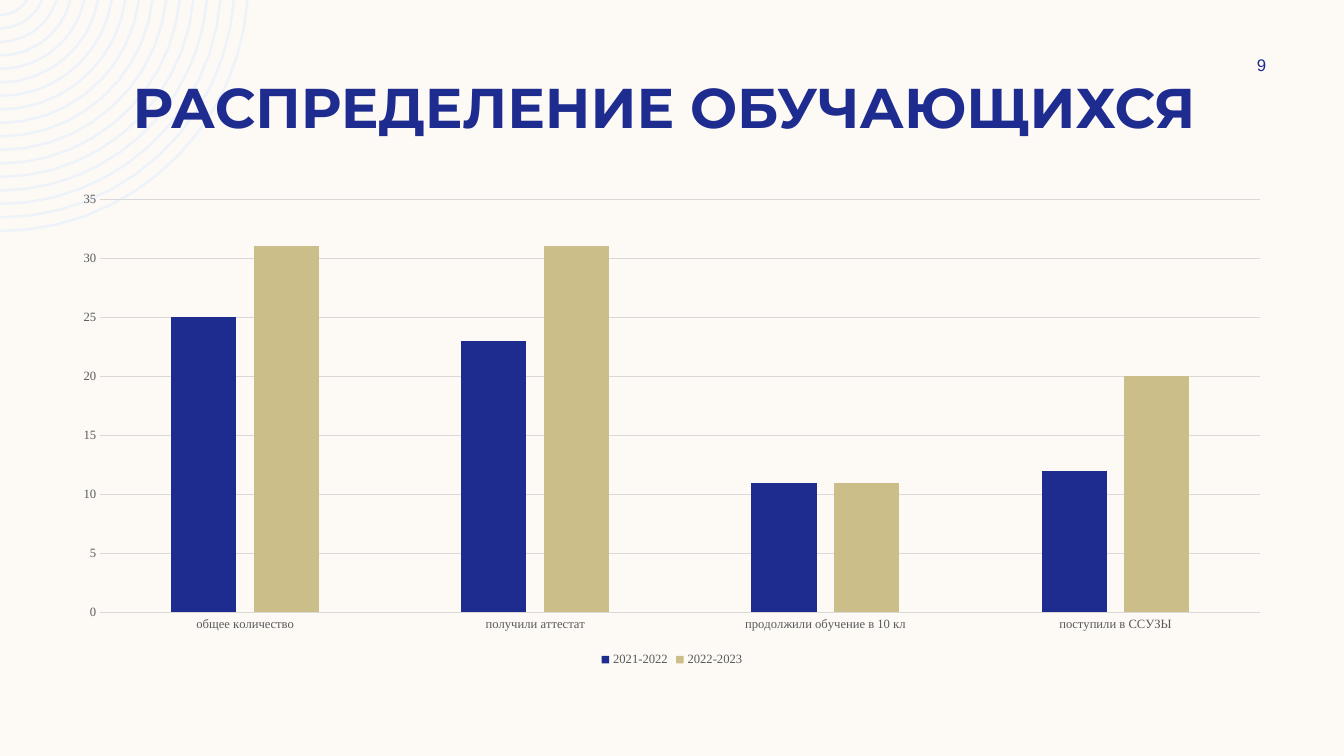
import math

from pptx import Presentation
from pptx.chart.data import CategoryChartData
from pptx.dml.color import RGBColor
from pptx.enum import chart as ch, text
from pptx.util import Emu, Pt

NAVY = RGBColor(0x1F, 0x2C, 0x8F)
SAND = RGBColor(0xCC, 0xBE, 0x89)
CREAM = RGBColor(0xFD, 0xFA, 0xF6)
PALE_BLUE = RGBColor(0xEE, 0xF3, 0xFA)
GRAY = RGBColor(0x59, 0x59, 0x59)
GRID = RGBColor(0xD9, 0xD9, 0xD9)

CATEGORIES = ["общее количество", "получили аттестат",
              "продолжили обучение в 10 кл", "поступили в ССУЗЫ"]
SERIES = [("2021-2022", (25, 23, 11, 12), NAVY),
          ("2022-2023", (31, 31, 11, 20), SAND)]


def px(n):
    """Turn pixels into EMU."""
    return Emu(round(n * 914400 / 100.8))


def style_font(font, size, color, name="Times New Roman", bold=False):
    """Set the look of a font."""
    font.size, font.name, font.bold = Pt(size), name, bold
    font.color.rgb = color


def add_text(s, box, content, **fmt):
    """Add a centred text box."""
    tf = s.shapes.add_textbox(*map(px, box)).text_frame
    tf.word_wrap = True
    tf.vertical_anchor = text.MSO_ANCHOR.MIDDLE
    p = tf.paragraphs[0]
    p.alignment = text.PP_ALIGN.CENTER
    r = p.add_run()
    r.text = content
    style_font(r.font, **fmt)


def arc(left, top, drop, radius):
    """List points of an arc from the top edge to the left edge."""
    steps = max(4, round(0.8 * math.sqrt(radius)))
    start = math.asin(drop / radius)
    angles = [start + (math.pi / 2 - start) * i / steps for i in range(steps + 1)]
    return [(px(left + radius * math.cos(a)), px(top - drop + radius * math.sin(a)))
            for a in angles]


def add_rings(s, box, count=17, drop=17):
    """Draw concentric rings in the corner of the box."""
    left, top, _, height = box
    outer, smallest = height + drop, 32
    step = (outer - smallest) / (count - 1)
    first, *others = [arc(left, top, drop, outer - i * step) for i in range(count)]
    fb = s.shapes.build_freeform(*first[0])
    fb.add_line_segments(first[1:], close=False)
    for points in others:
        fb.move_to(*points[0])
        fb.add_line_segments(points[1:], close=False)
    sp = fb.convert_to_shape()
    sp.shadow.inherit = False
    sp.fill.background()
    sp.line.color.rgb = PALE_BLUE
    sp.line.width = Pt(1.8)


def add_columns(s, box):
    """Add the clustered column chart of pupils by year."""
    data = CategoryChartData()
    data.categories = CATEGORIES
    for name, values, _ in SERIES:
        data.add_series(name, values)
    chart = s.shapes.add_chart(ch.XL_CHART_TYPE.COLUMN_CLUSTERED,
                               *map(px, box), data).chart
    style_font(chart.font, 10, GRAY)
    chart.has_title = False
    chart.has_legend = True
    chart.legend.position = ch.XL_LEGEND_POSITION.BOTTOM
    chart.legend.include_in_layout = False
    style_font(chart.legend.font, 9, GRAY)

    plot = chart.plots[0]
    plot.gap_width, plot.overlap, plot.vary_by_categories = 219, -27, False
    for series, (_, _, color) in zip(plot.series, SERIES):
        series.format.fill.solid()
        series.format.fill.fore_color.rgb = color
        series.invert_if_negative = False

    cat, val = chart.category_axis, chart.value_axis
    for axis in (cat, val):
        axis.major_tick_mark = axis.minor_tick_mark = ch.XL_TICK_MARK.NONE
        style_font(axis.tick_labels.font, 9, GRAY)
    val.minimum_scale, val.maximum_scale, val.major_unit = 0, 35, 5
    val.format.line.fill.background()
    for line in (cat.format.line, val.major_gridlines.format.line):
        line.color.rgb = GRID
        line.width = Pt(0.75)


def build_slide(prs):
    """Build the slide about the distribution of pupils."""
    s = prs.slides.add_slide(prs.slide_layouts[6])
    s.background.fill.solid()
    s.background.fill.fore_color.rgb = CREAM
    add_rings(s, (0, 0, 246, 231))
    add_text(s, (84, 64, 1176, 85), "РАСПРЕДЕЛЕНИЕ ОБУЧАЮЩИХСЯ ",
             size=40, color=NAVY, name="Montserrat", bold=True)
    add_text(s, (1207, 50, 109, 30), "9", size=12, color=NAVY, name="Arial")
    add_columns(s, (59, 182, 1226, 489))


def main():
    """Create and save the presentation."""
    prs = Presentation()
    prs.slide_width, prs.slide_height = px(1344), px(756)
    build_slide(prs)
    prs.save("out.pptx")


if __name__ == "__main__":
    main()
